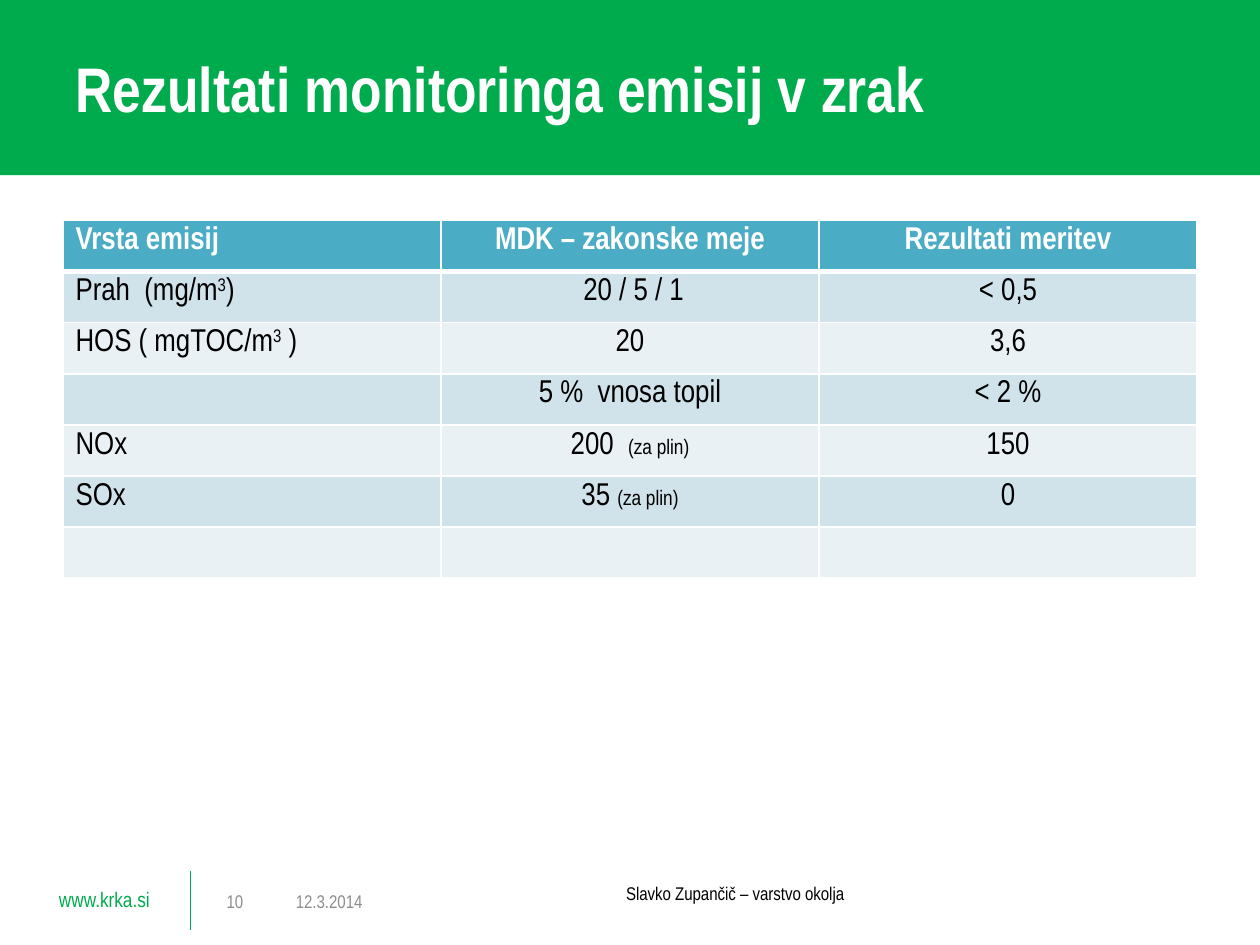
from lxml import etree
from pptx import Presentation
from pptx.dml.color import RGBColor
from pptx.enum.shapes import MSO_CONNECTOR, MSO_SHAPE
from pptx.enum.text import MSO_ANCHOR, PP_ALIGN
from pptx.oxml.ns import qn
from pptx.util import Inches, Pt

GREEN = RGBColor(0x00, 0xAB, 0x4E)
WHITE = RGBColor(0xFF, 0xFF, 0xFF)
BLACK = RGBColor(0x00, 0x00, 0x00)
GRAY = RGBColor(0x8C, 0x8C, 0x8C)
TEAL = RGBColor(0x4B, 0xAC, 0xC6)
BANDS = (RGBColor(0xE9, 0xF1, 0xF5), RGBColor(0xD0, 0xE3, 0xEA))
RECT = MSO_SHAPE.RECTANGLE
LINE = MSO_CONNECTOR.STRAIGHT
TOP, MID = MSO_ANCHOR.TOP, MSO_ANCHOR.MIDDLE
LEFT, CENTER = PP_ALIGN.LEFT, PP_ALIGN.CENTER

SUP = "sup"
NOTE = ("(za plin)", "small")
ROWS = [
    ["Vrsta emisij", "MDK – zakonske meje", "Rezultati meritev"],
    [["Prah  (mg/m", ("3", SUP), ")"], " 20 / 5 / 1", "< 0,5"],
    [["HOS ( mgTOC/m", ("3", SUP), " )"], "20", "3,6"],
    ["", "5 %  vnosa topil", "< 2 %"],
    ["NOx", ["200  ", NOTE], "150"],
    ["SOx", ["35 ", NOTE], "0"],
    ["", "", ""],
]


class Deck:
    face = "Arial Narrow"

    def __init__(self, slide):
        self.slide = slide
        self.shapes = slide.shapes

    def style(self, run, size, color, bold=False):
        font = run.font
        font.name = self.face
        font.size = Pt(size)
        font.bold = bold
        font.color.rgb = color

    def band(self, x, y, w, h, color):
        shape = self.shapes.add_shape(RECT, Inches(x), Inches(y), Inches(w), Inches(h))
        shape.shadow.inherit = False
        shape.fill.solid()
        shape.fill.fore_color.rgb = color
        shape.line.fill.background()

    def text(self, x, y, w, h, words, size, color, bold=False, align=LEFT, anchor=MID):
        box = self.shapes.add_textbox(Inches(x), Inches(y), Inches(w), Inches(h))
        frame = box.text_frame
        frame.word_wrap = True
        frame.vertical_anchor = anchor
        frame.text = words
        para = frame.paragraphs[0]
        para.alignment = align
        self.style(para.runs[0], size, color, bold)

    def rule(self, x, top, end, color, width):
        line = self.shapes.add_connector(LINE, Inches(x), Inches(top), Inches(x), Inches(end))
        line.line.color.rgb = color
        line.line.width = Pt(width)
        etree.SubElement(line._element.spPr, qn("a:effectLst"))

    def edge(self, cell, side, width):
        props = cell._tc.get_or_add_tcPr()
        line = etree.SubElement(props, qn("a:ln" + side), w=str(Pt(width)))
        fill = etree.SubElement(line, qn("a:solidFill"))
        etree.SubElement(fill, qn("a:srgbClr"), val=str(WHITE))

    def cell(self, cell, row, col, parts):
        head = row == 0
        for side in "LRTB":
            thick = (row, side) in ((0, "B"), (1, "T"))
            self.edge(cell, side, 3 if thick else 1)
        cell.fill.solid()
        cell.fill.fore_color.rgb = TEAL if head else BANDS[row % 2]
        para = cell.text_frame.paragraphs[0]
        para.alignment = CENTER if col else LEFT
        for part in parts if isinstance(parts, list) else [parts]:
            words, kind = part if isinstance(part, tuple) else (part, "")
            if not words:
                continue
            run = para.add_run()
            run.text = words
            size = 12 if kind == "small" else 18
            self.style(run, size, WHITE if head else BLACK, head)
            if kind == SUP:
                run._r.get_or_add_rPr().set("baseline", "30000")

    def table(self, x, y, w, h, rows):
        grid = self.shapes.add_table(
            len(rows), len(rows[0]), Inches(x), Inches(y), Inches(w), Inches(h)
        ).table
        for r, row in enumerate(rows):
            for c, parts in enumerate(row):
                self.cell(grid.cell(r, c), r, c, parts)


def main():
    prs = Presentation()
    prs.slide_width = Inches(10)
    prs.slide_height = Inches(7.5)
    deck = Deck(prs.slides.add_slide(prs.slide_layouts[6]))
    deck.band(0, 0, 10, 1.39, GREEN)
    deck.text(0.37, 6.99, 1.16, 0.3, "www.krka.si", 12, GREEN, anchor=TOP)
    deck.rule(1.51, 6.91, 7.38, GREEN, 0.75)
    deck.text(0.5, 0.07, 9, 1.25, "Rezultati monitoringa emisij v zrak", 36, WHITE, bold=True)
    deck.table(0.5, 1.75, 9, 2.84, ROWS)
    deck.text(2.25, 6.95, 0.96, 0.4, "12.3.2014", 10.5, GRAY)
    deck.text(3.27, 6.95, 5.13, 0.4, "Slavko Zupančič – varstvo okolja", 10.5, BLACK,
              align=CENTER, anchor=TOP)
    deck.text(1.7, 6.95, 0.48, 0.4, "10", 10.5, GRAY)
    prs.save("out.pptx")


if __name__ == "__main__":
    main()
